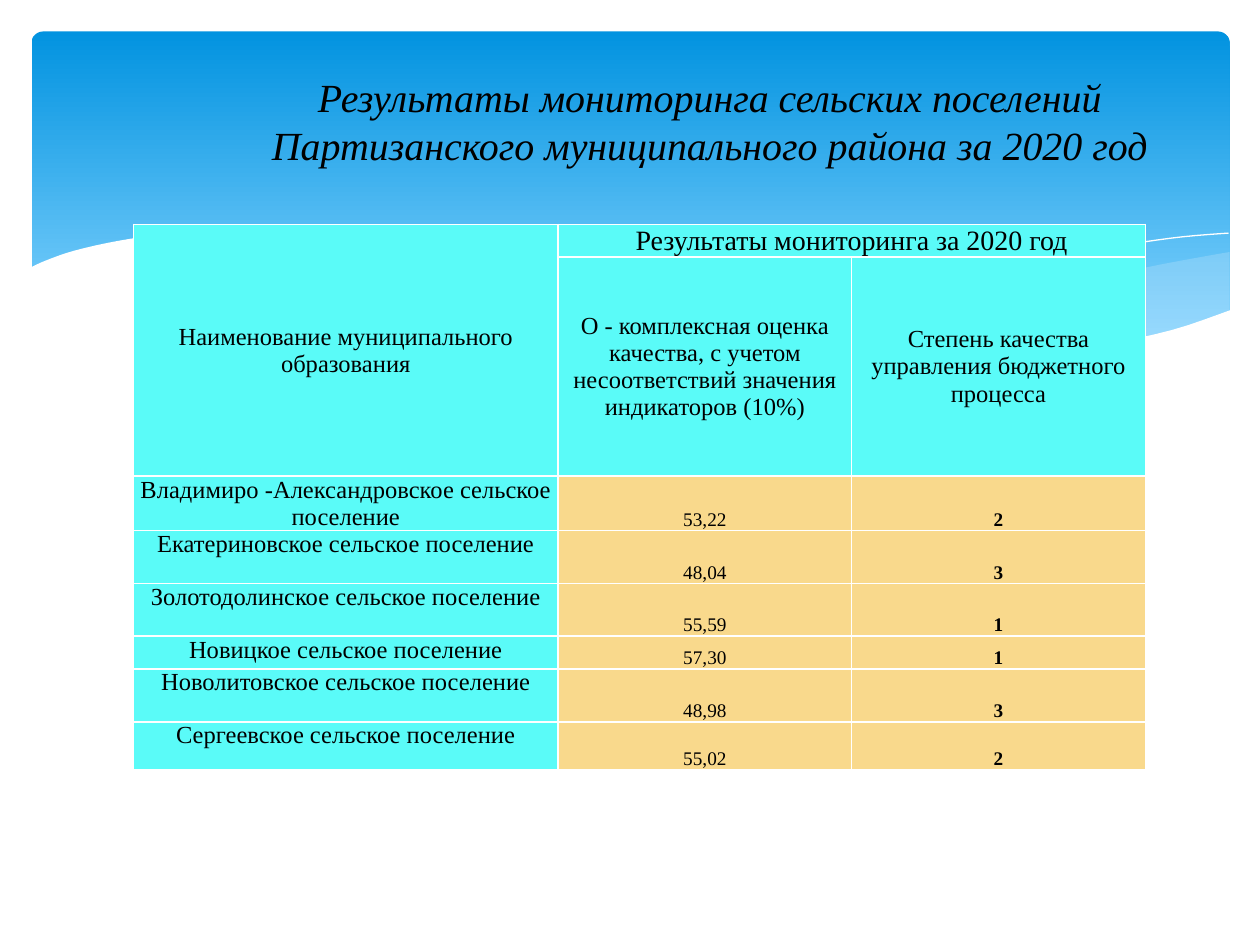
from dataclasses import dataclass

from lxml.etree import SubElement
from pptx import Presentation
from pptx.dml.color import RGBColor as RGB
from pptx.enum.shapes import MSO_SHAPE
from pptx.enum.text import MSO_ANCHOR as Anchor, MSO_AUTO_SIZE as AutoSize, PP_ALIGN as Align
from pptx.oxml.ns import qn
from pptx.oxml.xmlchemy import OxmlElement
from pptx.util import Inches, Pt

Point = tuple[float, float]


@dataclass(frozen=True)
class Theme:
    font: str = "Times New Roman"
    ink: str = "000000"
    white: str = "FFFFFF"
    sky_top: str = "0293E0"
    sky_bottom: str = "83D3FE"
    wave: str = "C6E7FC"
    label_fill: str = "5AFBF8"
    score_fill: str = "F9D98C"
    title_size: float = 22.8
    heading_size: float = 16
    label_size: float = 14
    score_size: float = 11


@dataclass(frozen=True)
class Wave:
    """A band between curved edges; without a fill it is a thin open line."""
    edges: list[list[Point]]
    fill: str | None = None
    opacity: int = 100


@dataclass(frozen=True)
class CellStyle:
    fill: str
    size: float
    anchor: Anchor
    bold: bool = False


@dataclass(frozen=True)
class Settlement:
    name: str
    score: str
    grade: str
    height: float = 0.42


THEME = Theme()
HEADING = CellStyle(THEME.label_fill, THEME.heading_size, Anchor.BOTTOM)
COLUMN_LABEL = CellStyle(THEME.label_fill, THEME.label_size, Anchor.MIDDLE)
NAME = CellStyle(THEME.label_fill, THEME.label_size, Anchor.TOP)
SCORE = CellStyle(THEME.score_fill, THEME.score_size, Anchor.BOTTOM)
GRADE = CellStyle(THEME.score_fill, THEME.score_size, Anchor.BOTTOM, bold=True)

TITLE = "Результаты мониторинга сельских поселений Партизанского муниципального района за 2020 год"
COLUMN_WIDTHS = [3.37, 2.33, 2.33]
HEADER_HEIGHTS = [0.26, 1.74]
HEADERS = [
    (0, 0, "Наименование муниципального образования", COLUMN_LABEL),
    (0, 1, "Результаты мониторинга за 2020 год", HEADING),
    (1, 1, "O - комплексная оценка качества, с учетом несоответствий значения индикаторов (10%)",
     COLUMN_LABEL),
    (1, 2, "Степень качества управления бюджетного процесса", COLUMN_LABEL),
]
SETTLEMENTS = [
    Settlement("Владимиро -Александровское сельское поселение", "53,22", "2"),
    Settlement("Екатериновское сельское поселение", "48,04", "3"),
    Settlement("Золотодолинское сельское поселение", "55,59", "1"),
    Settlement("Новицкое сельское поселение", "57,30", "1", 0.26),
    Settlement("Новолитовское сельское поселение", "48,98", "3"),
    Settlement("Сергеевское сельское поселение", "55,02", "2", 0.38),
]

WAVES = [
    Wave([[(9.76, 2), (9.21, 2.1), (8.61, 2.23), (7.79, 2.42), (7.06, 2.57), (6.61, 2.65)],
          [(6.61, 2.65), (7.19, 2.72), (7.69, 2.77), (8.14, 2.78), (8.63, 2.75), (9.13, 2.67),
           (9.49, 2.57), (9.76, 2.47)]], THEME.wave, 29),
    Wave([[(6.13, 2.57), (6.72, 2.41), (7.48, 2.23), (8.36, 2.04), (8.95, 1.94), (9.38, 1.88),
           (9.75, 1.85)]]),
    Wave([[(9.77, 2.46), (9.3, 2.62), (8.75, 2.73), (8.09, 2.77), (7.44, 2.74), (6.68, 2.65),
           (5.79, 2.5), (4.47, 2.2), (3.65, 2.02), (2.92, 1.9), (2.3, 1.85), (1.77, 1.84),
           (1.32, 1.86), (0.95, 1.91), (0.59, 1.99), (0.36, 2.07), (0.23, 2.13)],
          [(0.23, 3.29), (9.77, 3.29)]], THEME.white),
]


def smooth(knots: list[Point], steps: int = 4) -> list[Point]:
    """Points of a Catmull-Rom curve through the knots."""
    if len(knots) < 3:
        return knots
    padded = [knots[0], *knots, knots[-1]]
    curve = [knots[0]]
    for a, b, c, d in zip(padded, padded[1:], padded[2:], padded[3:]):
        for t in (step / steps for step in range(1, steps + 1)):
            x, y = (
                q + (r - p) * t / 2 + (2 * p - 5 * q + 4 * r - s) * t**2 / 2
                + (3 * q - p - 3 * r + s) * t**3 / 2
                for p, q, r, s in zip(a, b, c, d)
            )
            curve.append((x, y))
    return curve


def draw_sky(slide) -> None:
    sky = slide.shapes.add_shape(
        MSO_SHAPE.ROUNDED_RECTANGLE, Inches(0.25), Inches(0.25), Inches(9.51), Inches(2.7))
    sky.adjustments[0] = 0.034
    sky.shadow.inherit = False
    sky.line.fill.background()
    sky.fill.gradient()
    sky.fill.gradient_angle = 270
    colours = [(0, THEME.sky_top), (0.9, THEME.sky_bottom)]
    for stop, (position, colour) in zip(sky.fill.gradient_stops, colours):
        stop.position = position
        stop.color.rgb = RGB.from_string(colour)


def draw_wave(slide, wave: Wave) -> None:
    start, *rest = [(Inches(x), Inches(y)) for edge in wave.edges for x, y in smooth(edge)]
    builder = slide.shapes.build_freeform(*start)
    builder.add_line_segments(rest, close=wave.fill is not None)
    band = builder.convert_to_shape()
    band.shadow.inherit = False
    if wave.fill is None:
        band.fill.background()
        band.line.color.rgb = RGB.from_string(THEME.white)
        band.line.width = Pt(0)
        return
    band.line.fill.background()
    band.fill.solid()
    band.fill.fore_color.rgb = RGB.from_string(wave.fill)
    if wave.opacity < 100:
        colour = band.fill._xPr.find(qn("a:solidFill"))[0]
        SubElement(colour, qn("a:alpha"), val=str(wave.opacity * 1000))


def write(frame, text: str, size: float, **styles: bool) -> None:
    paragraph = frame.paragraphs[0]
    paragraph.alignment = Align.CENTER
    run = paragraph.add_run()
    run.text = text
    run.font.color.rgb = RGB.from_string(THEME.ink)
    for name, setting in {"name": THEME.font, "size": Pt(size), **styles}.items():
        setattr(run.font, name, setting)


def paint_cell(cell, style: CellStyle) -> None:
    layout = dict.fromkeys(("margin_left", "margin_right", "margin_top", "margin_bottom"), 0)
    for name, setting in {**layout, "vertical_anchor": style.anchor}.items():
        setattr(cell, name, setting)
    cell.fill.solid()
    cell.fill.fore_color.rgb = RGB.from_string(style.fill)
    for index, side in enumerate(("a:lnL", "a:lnR", "a:lnT", "a:lnB")):
        border = OxmlElement(side)
        border.set("w", str(Pt(1)))
        SubElement(SubElement(border, qn("a:solidFill")), qn("a:srgbClr"), val=THEME.white)
        cell._tc.get_or_add_tcPr().insert(index, border)


def draw_results(slide) -> None:
    heights = HEADER_HEIGHTS + [settlement.height for settlement in SETTLEMENTS]
    results = slide.shapes.add_table(
        len(heights), len(COLUMN_WIDTHS), Inches(1.06), Inches(1.78),
        Inches(sum(COLUMN_WIDTHS)), Inches(sum(heights))).table
    results.first_row = results.horz_banding = False
    for column, width in zip(results.columns, COLUMN_WIDTHS):
        column.width = Inches(width)
    for row, height in zip(results.rows, heights):
        row.height = Inches(height)
    results.cell(0, 0).merge(results.cell(1, 0))
    results.cell(0, 1).merge(results.cell(0, 2))

    entries = list(HEADERS)
    for row, place in enumerate(SETTLEMENTS, start=len(HEADER_HEIGHTS)):
        entries += [(row, 0, place.name, NAME), (row, 1, place.score, SCORE),
                    (row, 2, place.grade, GRADE)]
    for row, column, text, style in entries:
        cell = results.cell(row, column)
        paint_cell(cell, style)
        write(cell.text_frame, text, style.size, bold=style.bold)
    for row, column in ((1, 0), (0, 2)):
        paint_cell(results.cell(row, column), COLUMN_LABEL)


def place_title(slide) -> None:
    """Write the title and bring it in front of the sky."""
    title = slide.shapes.title
    slide.shapes._spTree.append(title._element)
    box = {"left": 1.77, "top": 0.52, "width": 7.73, "height": 0.87}
    for name, length in box.items():
        setattr(title, name, Inches(length))
    frame = title.text_frame
    layout = {"word_wrap": True, "auto_size": AutoSize.NONE, "vertical_anchor": Anchor.MIDDLE}
    for name, setting in layout.items():
        setattr(frame, name, setting)
    write(frame, TITLE, THEME.title_size, italic=True, bold=False)


def main() -> None:
    deck = Presentation()
    deck.slide_width, deck.slide_height = Inches(10), Inches(7.5)
    slide = deck.slides.add_slide(deck.slide_layouts[5])
    draw_sky(slide)
    for wave in WAVES:
        draw_wave(slide, wave)
    draw_results(slide)
    place_title(slide)
    deck.save("out.pptx")


if __name__ == "__main__":
    main()
